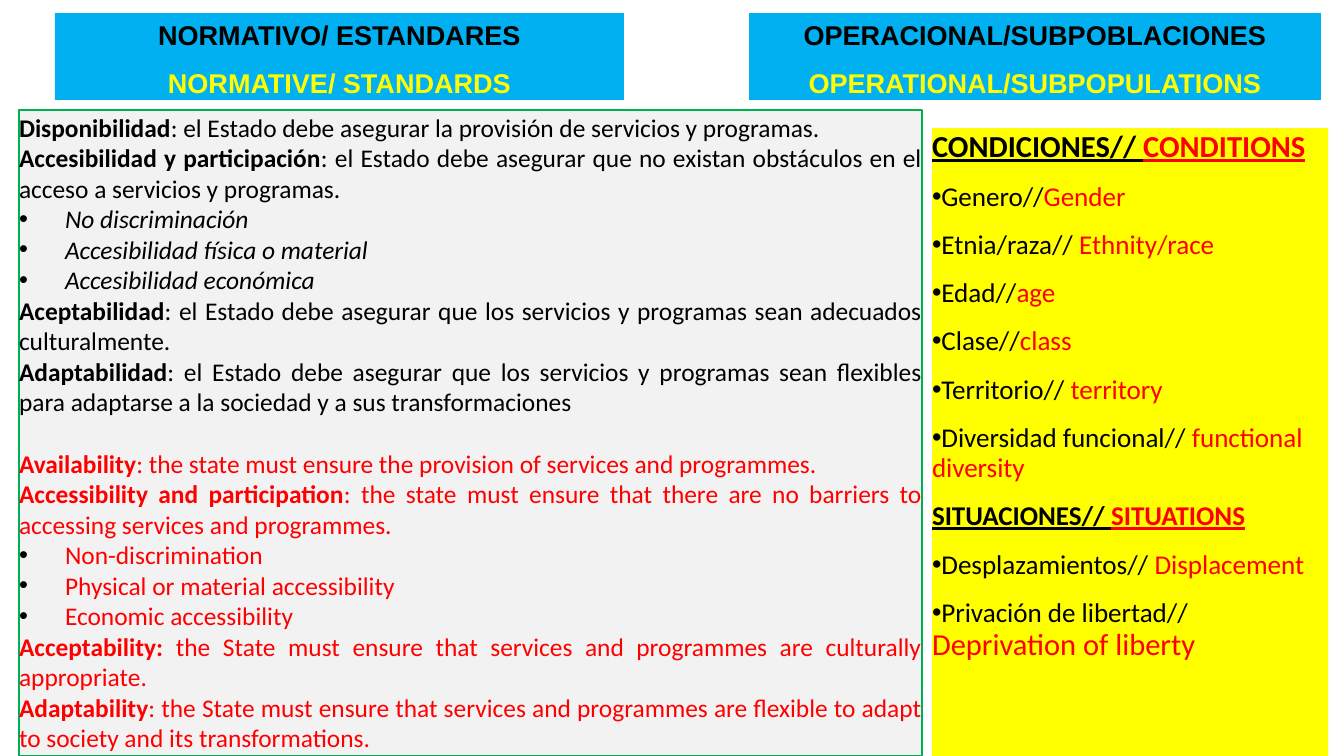
from lxml import etree
from pptx import Presentation
from pptx.dml.color import RGBColor
from pptx.enum.text import MSO_ANCHOR, MSO_AUTO_SIZE, PP_ALIGN
from pptx.oxml.ns import qn
from pptx.util import Emu, Pt

PX = 7495  # EMU per px, 122 px to the inch
BLACK = RGBColor(0, 0, 0)
RED = RGBColor(255, 0, 0)
YELLOW = RGBColor(255, 255, 0)
BLUE = RGBColor(0, 176, 240)
GREY = RGBColor(242, 242, 242)
GREEN = RGBColor(0, 176, 80)

HEADINGS = {
    1: ("NORMATIVO/ ESTANDARES", "NORMATIVE/ STANDARDS"),
    3: ("OPERACIONAL/SUBPOBLACIONES", "OPERATIONAL/SUBPOPULATIONS"),
}
# Each entry is a term and its explanation; an entry without one is a bullet.
STANDARDS = {
    BLACK: [
        ("Disponibilidad", ": el Estado debe asegurar la provisión de servicios y programas."),
        ("Accesibilidad y participación", ": el Estado debe asegurar que no existan "
         "obstáculos en el acceso a servicios y programas."),
        ("No discriminación", ""),
        ("Accesibilidad física o material", ""),
        ("Accesibilidad económica", ""),
        ("Aceptabilidad", ": el Estado debe asegurar que los servicios y programas "
         "sean adecuados culturalmente."),
        ("Adaptabilidad", ": el Estado debe asegurar que los servicios y programas sean "
         "flexibles para adaptarse a la sociedad y a sus transformaciones"),
    ],
    RED: [
        ("Availability", ": the state must ensure the provision of services and programmes."),
        ("Accessibility and participation", ": the state must ensure that there are no "
         "barriers to accessing services and programmes."),
        ("Non-discrimination", ""),
        ("Physical or material accessibility", ""),
        ("Economic accessibility", ""),
        ("Acceptability:", " the State must ensure that services and programmes are "
         "culturally appropriate."),
        ("Adaptability", ": the State must ensure that services and programmes are "
         "flexible to adapt to society and its transformations."),
    ],
}
# Spanish, English, size of each, whether it is a heading
SUBPOPULATIONS = [
    ("CONDICIONES// ", "CONDITIONS", 18, 18, True),
    ("Genero//", "Gender", 16, 16, False),
    ("Etnia/raza// ", "Ethnity/race", 16, 16, False),
    ("Edad//", "age", 16, 16, False),
    ("Clase//", "class", 16, 16, False),
    ("Territorio// ", "territory", 16, 16, False),
    ("Diversidad funcional// ", "functional diversity", 16, 16, False),
    ("SITUACIONES// ", "SITUATIONS", 16, 16, True),
    ("Desplazamientos// ", "Displacement", 16, 16, False),
    ("Privación de libertad// ", "Deprivation of liberty", 16, 18, False),
]


def next_para(frame, bulleted=False, indent=0):
    """Start a paragraph, reusing the empty first one, with its bullet and indent."""
    para = frame.paragraphs[0]
    if para.runs:
        para = frame.add_paragraph()
    props = para._p.get_or_add_pPr()
    props.set("marL", str(indent * PX))
    props.set("indent", str(-indent * PX))
    if bulleted:
        colour = etree.SubElement(props, qn("a:buClr"))
        etree.SubElement(colour, qn("a:srgbClr"), val=str(BLACK))
        etree.SubElement(props, qn("a:buFont"), typeface="Arial")
        etree.SubElement(props, qn("a:buChar"), char="•")
    else:
        etree.SubElement(props, qn("a:buNone"))
    para.space_before = Pt(0)
    return para


def add_span(para, text):
    span = para.add_run()
    span.text = text
    return span.font


deck = Presentation()
deck.slide_width, deck.slide_height = Emu(1344 * PX), Emu(756 * PX)
page = deck.slides.add_slide(deck.slide_layouts[4])
title = page.shapes.title._element
title.getparent().remove(title)

# Boxes
BOXES = {
    1: (55, 13, 569, 87, BLUE),
    2: (19, 110, 903, 646, GREY),
    3: (749, 13, 572, 87, BLUE),
    4: (932, 128, 396, 628, YELLOW),
}
boxes = {box.placeholder_format.idx: box for box in page.placeholders}
for idx, (left, top, width, height, fill) in BOXES.items():
    box = boxes[idx]
    box.left, box.top = Emu(left * PX), Emu(top * PX)
    box.width, box.height = Emu(width * PX), Emu(height * PX)
    box.fill.solid()
    box.fill.fore_color.rgb = fill
    frame = box.text_frame
    frame.word_wrap = True
    frame.auto_size = MSO_AUTO_SIZE.NONE
    frame.vertical_anchor = MSO_ANCHOR.BOTTOM if idx in HEADINGS else MSO_ANCHOR.TOP
    frame.margin_left = frame.margin_right = frame.margin_bottom = 0
    frame.margin_top = Emu(2 * PX)
boxes[2].line.color.rgb = GREEN
boxes[2].line.width = Pt(0.75)

# Column headings
for idx, lines in HEADINGS.items():
    for text, colour in zip(lines, (BLACK, YELLOW)):
        para = next_para(boxes[idx].text_frame)
        para.alignment = PP_ALIGN.CENTER
        para.line_spacing = 0.93
        para.space_after = Pt(10.6)
        para.font.name = "Arial"
        para.font.size = Pt(16)
        para.font.bold = True
        para.font.color.rgb = colour
        add_span(para, text)

# Standards in Spanish, then in English
for colour, entries in STANDARDS.items():
    for number, (term, explanation) in enumerate(entries):
        bulleted = not explanation
        para = next_para(boxes[2].text_frame, bulleted, 46 if bulleted else 0)
        para.alignment = PP_ALIGN.JUSTIFY
        para.line_spacing = 1.0
        para.space_after = Pt(0)
        if colour == RED and number == 0:
            para.space_before = Pt(18.3)
        para.font.name = "Calibri"
        para.font.size = Pt(15)
        para.font.italic = bulleted and colour == BLACK
        para.font.color.rgb = colour
        add_span(para, term).bold = not bulleted
        if explanation:
            add_span(para, explanation).bold = False

# Subpopulations
for spanish, english, spanish_size, english_size, heading in SUBPOPULATIONS:
    para = next_para(boxes[4].text_frame, not heading)
    para.alignment = PP_ALIGN.LEFT
    para.line_spacing = 0.93
    para.space_after = Pt(10.6)
    para.font.name = "Calibri"
    para.font.bold = heading
    para.font.underline = heading
    for text, size, colour in ((spanish, spanish_size, BLACK), (english, english_size, RED)):
        font = add_span(para, text)
        font.size = Pt(size)
        font.color.rgb = colour

deck.save("out.pptx")
